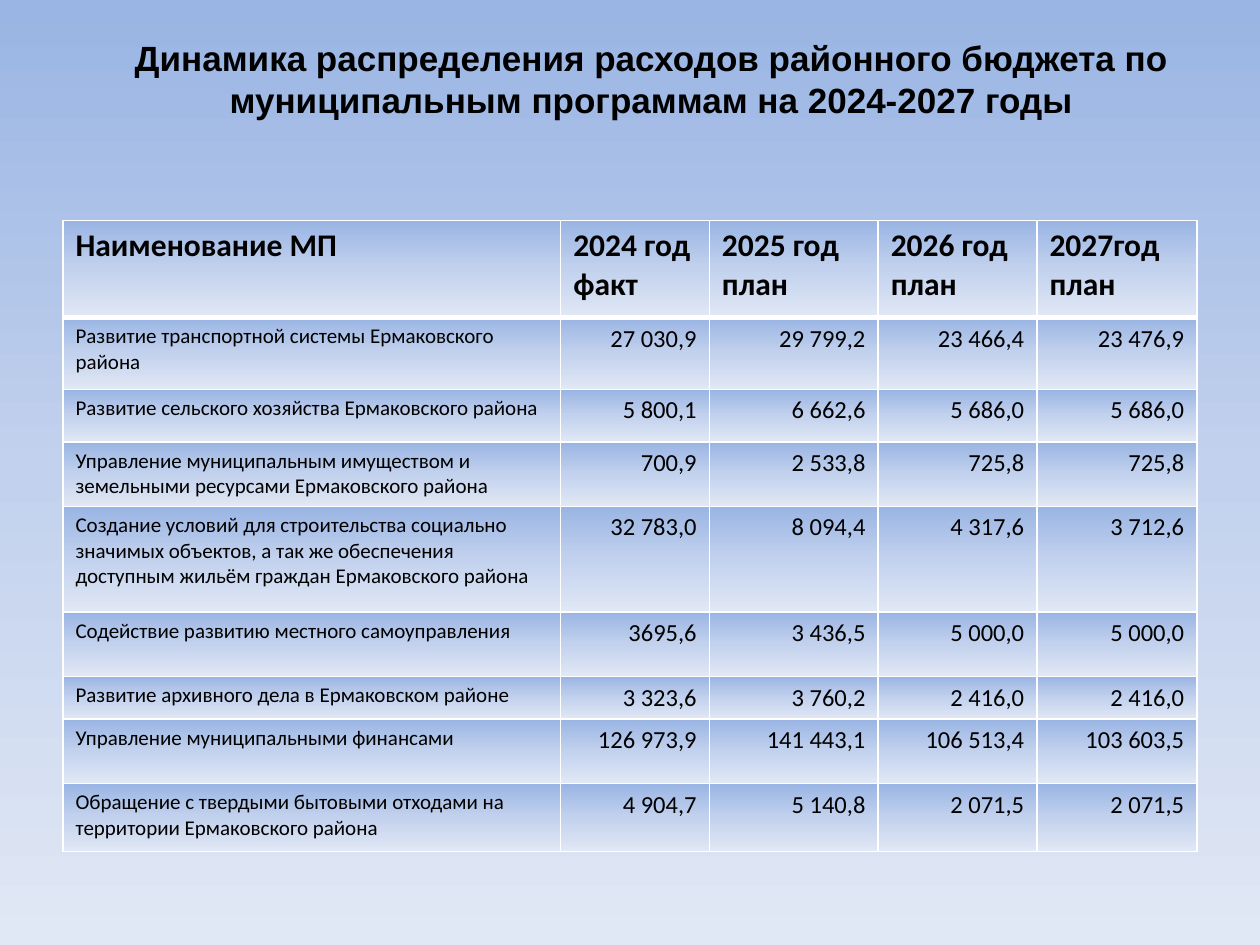
from lxml import etree
from pptx import Presentation, util as u
from pptx.dml.color import RGBColor
from pptx.enum import text
from pptx.oxml import parse_xml
from pptx.oxml.ns import nsdecls, qn

TITLE = "Динамика распределения расходов районного бюджета по муниципальным программам на 2024-2027 годы"
HEADER = ("Наименование МП", "2024 год факт", "2025 год план", "2026 год план", "2027год план")
PROGRAMS = [  # row height, name, values by year
    (0.57, "Развитие транспортной системы Ермаковского района",
     "27 030,9", "29 799,2", "23 466,4", "23 476,9"),
    (0.42, "Развитие сельского хозяйства Ермаковского района",
     "5 800,1", "6 662,6", "5 686,0", "5 686,0"),
    (0.51, "Управление муниципальным имуществом и земельными ресурсами Ермаковского района",
     "700,9", "2 533,8", "725,8", "725,8"),
    (0.84, "Создание условий для строительства социально значимых объектов, "
           "а так же обеспечения доступным жильём граждан Ермаковского района",
     "32 783,0", "8 094,4", "4 317,6", "3 712,6"),
    (0.51, "Содействие развитию местного самоуправления",
     "3695,6", "3 436,5", "5 000,0", "5 000,0"),
    (0.34, "Развитие архивного дела в Ермаковском районе",
     "3 323,6", "3 760,2", "2 416,0", "2 416,0"),
    (0.51, "Управление муниципальными финансами",
     "126 973,9", "141 443,1", "106 513,4", "103 603,5"),
    (0.54, "Обращение с твердыми бытовыми отходами на территории Ермаковского района",
     "4 904,7", "5 140,8", "2 071,5", "2 071,5"),
]
ROWS = [(0.77, *HEADER), *PROGRAMS]
COL_WIDTHS = (3.95, 1.18, 1.34, 1.26, 1.27)

THEME = {
    "gradient": ((0, "9AB5E4"), (50, "C2D1ED"), (100, "E1E8F5")),
    "border": "FFFFFF",
    "ink": RGBColor.from_string("000000"),
    "title": {"name": "Arial", "size": u.Pt(20), "bold": True},
    "header": {"name": "Calibri", "size": u.Pt(18), "bold": True},
    "name": {"name": "Calibri", "size": u.Pt(12), "bold": False},
    "value": {"name": "Calibri", "size": u.Pt(14), "bold": False},
}


def set_gradient(fill, owner):
    """Fill with the theme's vertical gradient; owner is the element holding the fill."""
    fill.gradient()
    old = next(owner.iter(qn("a:gradFill")))
    stops = "".join(f'<a:gs pos="{pos * 1000}"><a:srgbClr val="{color}"/></a:gs>'
                    for pos, color in THEME["gradient"])
    old.getparent().replace(old, parse_xml(
        f'<a:gradFill {nsdecls("a")} rotWithShape="1"><a:gsLst>{stops}</a:gsLst>'
        '<a:lin ang="5400000" scaled="0"/></a:gradFill>'))


def set_borders(cell, widths):
    """Draw left, right, top and bottom borders, widths in points."""
    tcPr = cell._tc.get_or_add_tcPr()
    for i, (side, width) in enumerate(zip("LRTB", widths)):
        ln = etree.Element(qn(f"a:ln{side}"), w=str(u.Pt(width)))
        solid = etree.SubElement(ln, qn("a:solidFill"))
        etree.SubElement(solid, qn("a:srgbClr"), val=THEME["border"])
        tcPr.insert(i, ln)


def write(tf, content, style, align):
    p = tf.paragraphs[0]
    p.alignment = align
    r = p.add_run()
    r.text = content
    for key, value in THEME[style].items():
        setattr(r.font, key, value)
    r.font.color.rgb = THEME["ink"]


def add_title(s):
    tf = s.shapes.add_textbox(u.Inches(0.67), u.Inches(0.29), u.Inches(9), u.Inches(1.06)).text_frame
    frame = {"word_wrap": True, "vertical_anchor": text.MSO_ANCHOR.TOP,
             "margin_left": 0, "margin_right": 0, "margin_top": 0, "margin_bottom": 0}
    for key, value in frame.items():
        setattr(tf, key, value)
    write(tf, TITLE, "title", text.PP_ALIGN.CENTER)


def add_budget_table(s):
    height = sum(row[0] for row in ROWS)
    table = s.shapes.add_table(len(ROWS), len(COL_WIDTHS), u.Inches(0.5), u.Inches(1.75),
                               u.Inches(sum(COL_WIDTHS)), u.Inches(height)).table
    for column, width in zip(table.columns, COL_WIDTHS):
        column.width = u.Inches(width)
    for i, (row_height, *cells) in enumerate(ROWS):
        table.rows[i].height = u.Inches(row_height)
        for j, content in enumerate(cells):
            cell = table.cell(i, j)
            style = "header" if i == 0 else "value" if j else "name"
            align = text.PP_ALIGN.RIGHT if style == "value" else text.PP_ALIGN.LEFT
            write(cell.text_frame, content, style, align)
            set_gradient(cell.fill, cell._tc)
            set_borders(cell, (1, 1, 3 if i == 1 else 1, 3 if i == 0 else 1))


def main():
    prs = Presentation()
    prs.slide_width, prs.slide_height = u.Inches(10), u.Inches(7.5)
    s = prs.slides.add_slide(prs.slide_layouts[6])
    set_gradient(s.background.fill, s.element)
    add_title(s)
    add_budget_table(s)
    prs.save("out.pptx")


if __name__ == "__main__":
    main()
